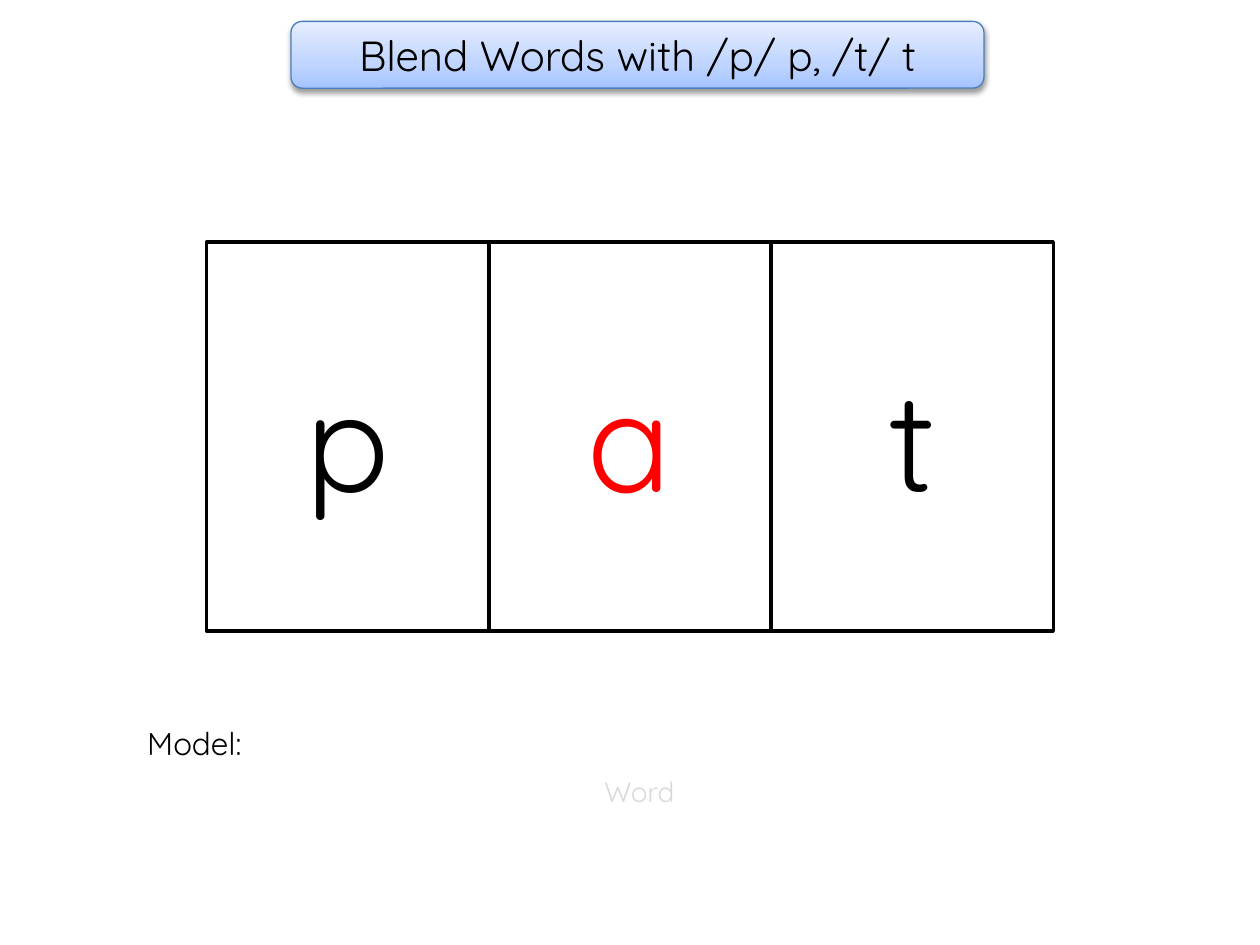
from lxml import etree
from pptx import Presentation
from pptx.dml.color import RGBColor
from pptx.enum import shapes as sh, text as tx
from pptx.oxml import parse_xml
from pptx.oxml.ns import nsdecls, qn
from pptx.util import Inches, Pt

BLACK = RGBColor(0, 0, 0)
WHITE = RGBColor(255, 255, 255)
RED = RGBColor(255, 0, 0)
GREY = RGBColor(0xD9, 0xD9, 0xD9)
BLUE = RGBColor(0x4B, 0x7E, 0xBC)
STOPS = [(0, "A4C4FF"), (35, "BFD4FF"), (100, "E6EEFF")]


def write(shape, words, size, color=BLACK, align=tx.PP_ALIGN.CENTER,
          anchor=tx.MSO_ANCHOR.MIDDLE):
    frame = shape.text_frame
    frame.word_wrap = True
    frame.auto_size = tx.MSO_AUTO_SIZE.NONE
    frame.vertical_anchor = anchor
    para = frame.paragraphs[0]
    para.alignment = align
    run = para.add_run()
    run.text = words
    run.font.name = "Quicksand"
    run.font.size = Pt(size)
    run.font.color.rgb = color


def box(kind, place, line, width):
    shape = slide.shapes.add_shape(kind, *map(Inches, place))
    shape.shadow.inherit = False
    shape.line.color.rgb = line
    shape.line.width = Pt(width)
    return shape


deck = Presentation()
deck.slide_width, deck.slide_height = Inches(10), Inches(7.5)
slide = deck.slides.add_slide(deck.slide_layouts[5])

# Title banner with gradient and soft shadow
place = (2.31, 0.17, 5.5, 0.53)
banner = box(sh.MSO_SHAPE.ROUNDED_RECTANGLE, place, BLUE, 0.75)
banner.fill.gradient()
banner.fill.gradient_angle = 90
props = banner._element.spPr
stops = props.find(qn("a:gradFill")).find(qn("a:gsLst"))
for old in list(stops):
    stops.remove(old)
for pos, color in STOPS:
    stop = etree.SubElement(stops, qn("a:gs"), pos=str(pos * 1000))
    etree.SubElement(stop, qn("a:srgbClr"), val=color)
props.find(qn("a:effectLst")).append(parse_xml(
    f'<a:outerShdw {nsdecls("a")} blurRad="40000" dist="20000" dir="5400000"'
    ' rotWithShape="0"><a:srgbClr val="000000"><a:alpha val="38000"/>'
    '</a:srgbClr></a:outerShdw>'))

# Title text, in front of the banner
title = slide.shapes.title
title.left, title.top, title.width, title.height = map(Inches, place)
write(title, "Blend Words with /p/ p, /t/ t", 24)
slide.shapes._spTree.append(title._element)

# Letter cards
WIDTH = 2.24
for i, (letter, color) in enumerate([("p", BLACK), ("a", RED), ("t", BLACK)]):
    card = box(sh.MSO_SHAPE.RECTANGLE, (1.64 + i * WIDTH, 1.92, WIDTH, 3.09),
               BLACK, 2)
    card.fill.solid()
    card.fill.fore_color.rgb = WHITE
    write(card, letter, 80, color=color)

# Labels
word = slide.shapes.add_textbox(*map(Inches, (0.34, 6.1, 9.47, 0.37)))
write(word, "Word", 16, color=GREY, anchor=tx.MSO_ANCHOR.TOP)
model = slide.shapes.add_textbox(*map(Inches, (1.07, 5.7, 1.45, 0.4)))
write(model, "Model:", 18, align=tx.PP_ALIGN.LEFT, anchor=tx.MSO_ANCHOR.TOP)

deck.save("out.pptx")
